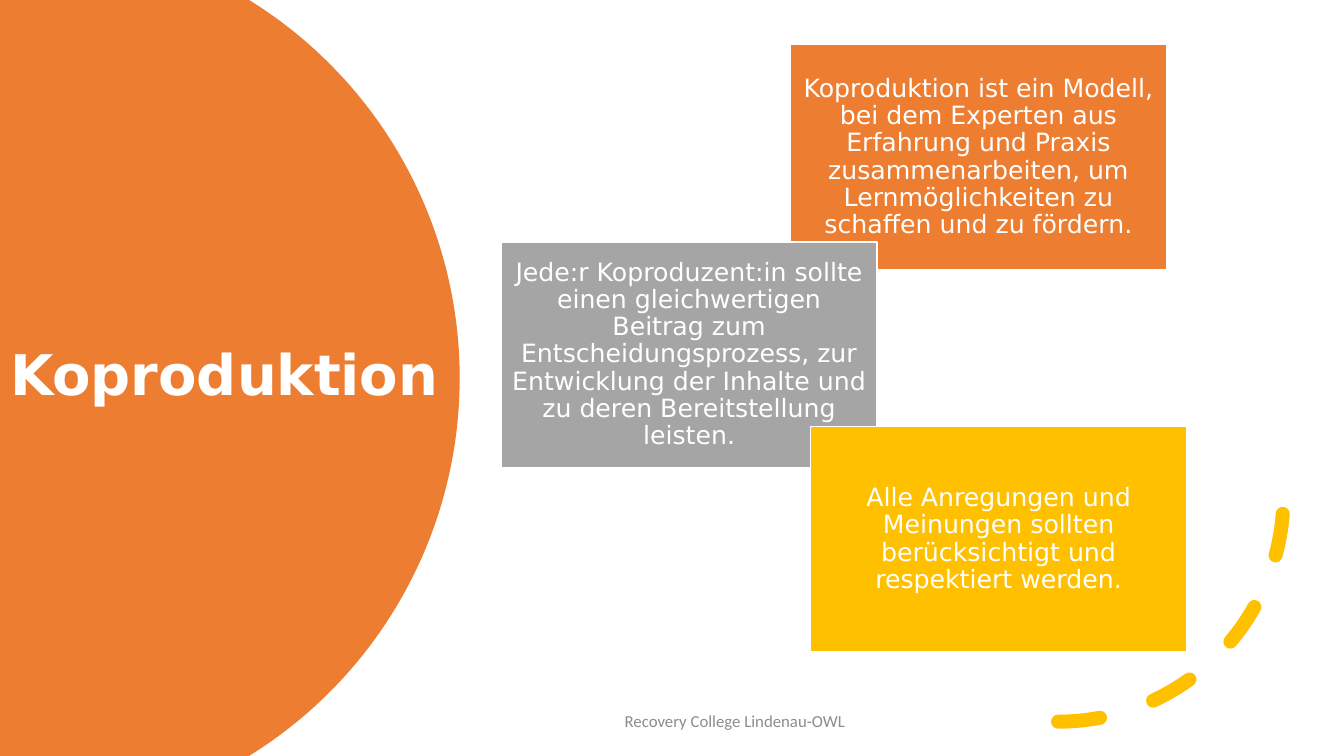
import math

from lxml import etree
from pptx import Presentation
from pptx.dml.color import RGBColor
from pptx.enum import dml, shapes, text
from pptx.oxml.ns import qn
from pptx.util import Inches, Pt

ORANGE, GREY, YELLOW, WHITE = "ED7D31", "A5A5A5", "FFC000", "FFFFFF"
HEADING_FONT, FOOTER_FONT = "DejaVu Sans", "Calibri"
PAGE_WIDTH, PAGE_HEIGHT = 13.33, 7.5

STATEMENTS = [
    (7.84, 0.44, ORANGE,
     "Koproduktion ist ein Modell, bei dem Experten aus Erfahrung und Praxis "
     "zusammenarbeiten, um Lernmöglichkeiten zu schaffen und zu fördern."),
    (4.97, 2.4, GREY,
     "Jede:r Koproduzent:in sollte einen gleichwertigen Beitrag zum "
     "Entscheidungsprozess, zur Entwicklung der Inhalte und zu deren "
     "Bereitstellung leisten."),
    (8.04, 4.23, YELLOW,
     "Alle Anregungen und Meinungen sollten berücksichtigt und respektiert werden."),
]


def color(value):
    return RGBColor.from_string(value)


class SlideBuilder:
    def __init__(self, page):
        self.page = page

    def set_text(self, box, words, size, font=HEADING_FONT, ink=WHITE, bold=False,
                 align=text.PP_ALIGN.CENTER, spacing=0.9, inset=None):
        """Fill a shape with one vertically centred, wrapped paragraph."""
        frame = box.text_frame
        frame.text = words
        frame.word_wrap = True
        frame.auto_size = text.MSO_AUTO_SIZE.NONE
        frame.vertical_anchor = text.MSO_ANCHOR.MIDDLE
        if inset is not None:
            frame.margin_left = frame.margin_right = Inches(inset)
            frame.margin_top = frame.margin_bottom = Inches(inset)
        para = frame.paragraphs[0]
        para.alignment = align
        para.line_spacing = spacing
        para.font.name = font
        para.font.size = Pt(size)
        para.font.bold = bold
        para.font.color.rgb = color(ink)

    def half_disc(self, radius, center_x, fill):
        """Draw a disc cut off by the left, top and bottom page edges."""
        middle = PAGE_HEIGHT / 2
        limit = math.asin(middle / radius)
        steps = 120
        angles = [limit * (2 * step / steps - 1) for step in range(steps + 1)]
        rim = [(Inches(center_x + radius * math.cos(angle)),
                Inches(middle + radius * math.sin(angle))) for angle in angles]
        builder = self.page.shapes.build_freeform(0, 0)
        builder.add_line_segments(rim + [(0, Inches(PAGE_HEIGHT))], close=True)
        disc = builder.convert_to_shape()
        disc.shadow.inherit = False
        disc.fill.solid()
        disc.fill.fore_color.rgb = color(fill)
        disc.line.fill.background()

    def title(self, words, left, top, width, height):
        title = self.page.shapes.title
        title.left, title.top = Inches(left), Inches(top)
        title.width, title.height = Inches(width), Inches(height)
        self.set_text(title, words, 40, bold=True, align=text.PP_ALIGN.LEFT)
        # Bring the title in front of the disc
        self.page.shapes.element.append(title.element)

    def dashed_arc(self, left, top, size, ink):
        """Draw a thick quarter arc from the bottom to the right."""
        arc = self.page.shapes.add_shape(
            shapes.MSO_SHAPE.ARC, Inches(left), Inches(top), Inches(size), Inches(size))
        arc.shadow.inherit = False
        arc.fill.background()
        arc.line.color.rgb = color(ink)
        arc.line.width = Pt(10)
        arc.line.dash_style = dml.MSO_LINE.DASH
        properties = arc.element.spPr
        properties.find(qn("a:xfrm")).set("flipV", "1")
        outline = properties.find(qn("a:ln"))
        outline.set("cap", "rnd")
        etree.SubElement(outline, qn("a:round"))

    def footer(self, words, left, top, width, height):
        box = self.page.shapes.add_textbox(
            Inches(left), Inches(top), Inches(width), Inches(height))
        self.set_text(box, words, 12, font=FOOTER_FONT, ink="8C8C8C", spacing=1.0)

    def statement(self, left, top, fill, words):
        box = self.page.shapes.add_shape(
            shapes.MSO_SHAPE.RECTANGLE,
            Inches(left), Inches(top), Inches(3.73), Inches(2.24))
        box.shadow.inherit = False
        box.fill.solid()
        box.fill.fore_color.rgb = color(fill)
        box.line.color.rgb = color(WHITE)
        box.line.width = Pt(1)
        self.set_text(box, words, 18, inset=0.07)


def main():
    deck = Presentation()
    deck.slide_width, deck.slide_height = Inches(PAGE_WIDTH), Inches(PAGE_HEIGHT)
    title_only = deck.slide_layouts[5]
    slide = SlideBuilder(deck.slides.add_slide(title_only))
    slide.half_disc(4.41, 0.15, ORANGE)
    slide.title("Koproduktion", 0, 1.35, 4.97, 4.79)
    slide.dashed_arc(8.26, 2.69, 4.47, YELLOW)
    slide.footer("Recovery College Lindenau-OWL", 4.42, 6.95, 5.74, 0.4)
    for statement in STATEMENTS:
        slide.statement(*statement)
    deck.save("out.pptx")


if __name__ == "__main__":
    main()
